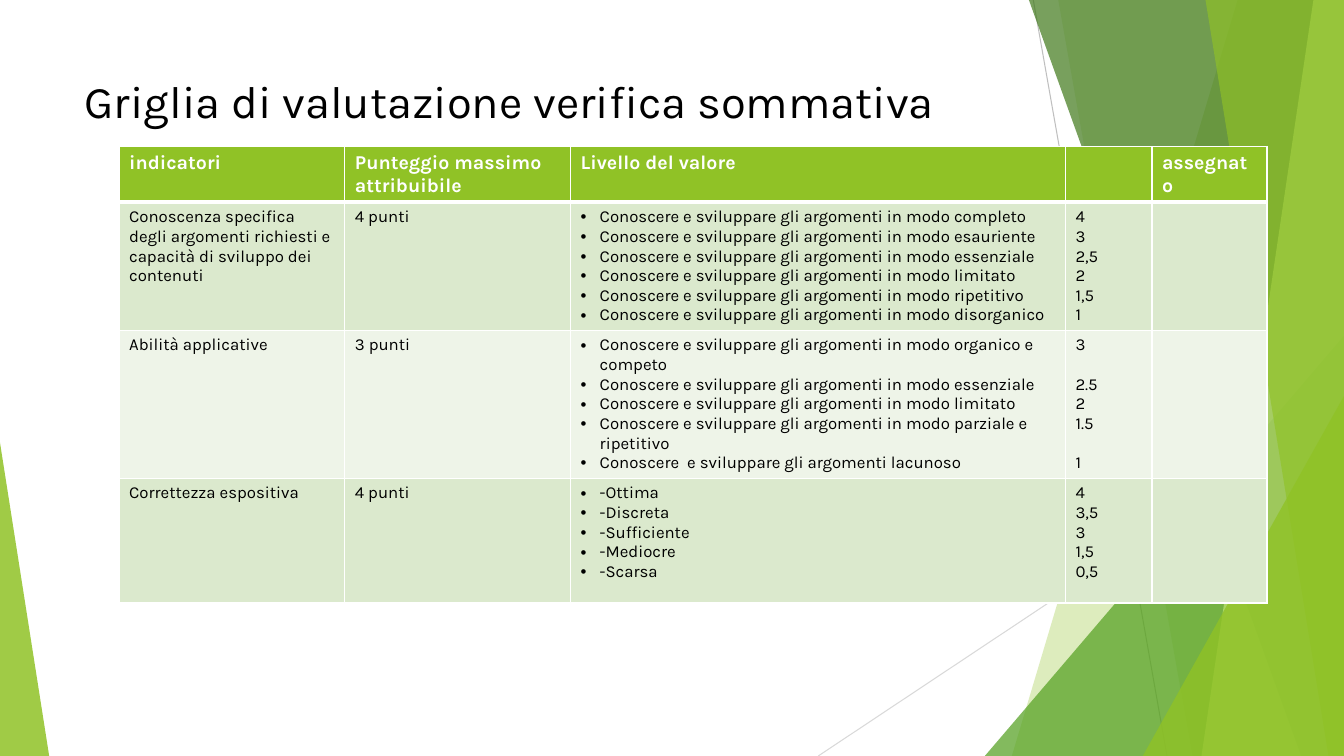
from dataclasses import dataclass

from lxml.etree import SubElement
from pptx import Presentation
from pptx.dml.color import RGBColor
from pptx.enum.shapes import MSO_CONNECTOR as Connector, MSO_SHAPE as Preset
from pptx.enum.text import MSO_ANCHOR as Anchor, MSO_AUTO_SIZE as AutoSize, PP_ALIGN as Align
from pptx.oxml.ns import qn
from pptx.util import Cm, Pt


@dataclass(frozen=True)
class Theme:
    font: str = "Karla"
    black: str = "000000"
    white: str = "FFFFFF"
    lime: str = "90C226"
    pale_lime: str = "C0E474"
    green: str = "54A021"
    dark_green: str = "3F7819"
    grey: str = "BFBFBF"
    light_grey: str = "D9D9D9"
    bands: tuple[str, str] = ("DBE9CD", "EEF4E8")
    title_size: float = 32.4
    header_size: float = 14
    body_size: float = 12
    line_height: float = 14.05


@dataclass(frozen=True)
class Ray:
    start: tuple[float, float]
    end: tuple[float, float]
    color: str


@dataclass(frozen=True)
class Panel:
    top_x: float
    bottom_x: float
    color: str
    opacity: int


@dataclass(frozen=True)
class Triangle:
    box: tuple[float, float, float, float]
    apex: float
    color: str
    opacity: int


@dataclass(frozen=True)
class Level:
    text: str
    score: str
    lines: int = 1


@dataclass(frozen=True)
class Criterion:
    name: str
    points: str
    levels: tuple[Level, ...]


THEME = Theme()
WIDTH, HEIGHT = 33.87, 19.05
COLUMNS = (5.69, 5.69, 12.47, 2.18, 2.9)
ROWS = (1.4, 3.23, 3.73, 3.14)
HEADERS = ("indicatori", "Punteggio massimo attribuibile", "Livello del valore", "", "assegnato")
DEVELOP = "Conoscere e sviluppare gli argomenti in modo "

DECORATION = (
    Ray((26.04, 0), (29.41, HEIGHT), THEME.grey),
    Ray((WIDTH, 10.24), (20.62, HEIGHT), THEME.light_grey),
    Panel(31.19, 25.5, THEME.lime, 30),
    Panel(26.67, 30.05, THEME.lime, 20),
    Triangle((24.82, 8.46, 9.05, 10.59), 1, THEME.green, 72),
    Panel(25.93, 32.79, THEME.dark_green, 70),
    Panel(33.1, 30.28, THEME.pale_lime, 70),
    Panel(30.38, 33.48, THEME.lime, 65),
    Triangle((28.8, 9.98, 5.07, 9.07), 1, THEME.lime, 80),
    Triangle((0, 11.15, 1.24, 7.9), 0, THEME.lime, 85),
)

CRITERIA = (
    Criterion("Conoscenza specifica degli argomenti richiesti e capacità di sviluppo dei contenuti", "4 punti", (
        Level(DEVELOP + "completo", "4"),
        Level(DEVELOP + "esauriente", "3"),
        Level(DEVELOP + "essenziale", "2,5"),
        Level(DEVELOP + "limitato", "2"),
        Level(DEVELOP + "ripetitivo", "1,5"),
        Level(DEVELOP + "disorganico", "1"),
    )),
    Criterion("Abilità applicative", "3 punti", (
        Level(DEVELOP + "organico e competo", "3", lines=2),
        Level(DEVELOP + "essenziale", "2.5"),
        Level(DEVELOP + "limitato", "2"),
        Level(DEVELOP + "parziale e ripetitivo", "1.5", lines=2),
        Level("Conoscere  e sviluppare gli argomenti lacunoso", "1"),
    )),
    Criterion("Correttezza espositiva", "4 punti", (
        Level("-Ottima", "4"),
        Level("-Discreta", "3,5"),
        Level("-Sufficiente", "3"),
        Level("-Mediocre", "1,5"),
        Level("-Scarsa", "0,5"),
    )),
)


def paint(target, color: str, opacity: int = 100) -> None:
    target.fill.solid()
    target.fill.fore_color.rgb = RGBColor.from_string(color)
    if opacity < 100:
        srgb = next(target._element.iter(qn("a:srgbClr")))
        SubElement(srgb, qn("a:alpha"), val=str(opacity * 1000))


def write(frame, *texts: str, size: float = THEME.body_size, color: str = THEME.black,
          bold: bool = False, bullet: bool = False, gaps: tuple[float, ...] = ()) -> None:
    for index, text in enumerate(texts):
        para = frame.paragraphs[0] if index == 0 else frame.add_paragraph()
        para.alignment = Align.LEFT
        if gaps:
            para.space_after = Pt(gaps[index])
        if bullet:
            properties = para._p.get_or_add_pPr()
            properties.set("marL", str(Cm(0.48)))
            properties.set("indent", str(-Cm(0.48)))
            SubElement(properties, qn("a:buFont"), typeface="Arial")
            SubElement(properties, qn("a:buChar"), char="•")
        if text:
            span = para.add_run()
            span.text = text
            span.font.name = THEME.font
            span.font.size = Pt(size)
            span.font.bold = bold
            span.font.color.rgb = RGBColor.from_string(color)


def draw_ray(page, ray: Ray) -> None:
    line = page.shapes.add_connector(Connector.STRAIGHT, *map(Cm, ray.start + ray.end))
    line.line.color.rgb = RGBColor.from_string(ray.color)
    line.line.width = Pt(0.75)
    SubElement(line._element.spPr, qn("a:effectLst"))


def draw_surface(page, surface: Panel | Triangle) -> None:
    if isinstance(surface, Panel):
        builder = page.shapes.build_freeform(Cm(surface.top_x), 0)
        corners = ((WIDTH, 0), (WIDTH, HEIGHT), (surface.bottom_x, HEIGHT))
        builder.add_line_segments([(Cm(x), Cm(y)) for x, y in corners], close=True)
        shape = builder.convert_to_shape()
    else:
        shape = page.shapes.add_shape(Preset.ISOSCELES_TRIANGLE, *map(Cm, surface.box))
        shape.adjustments[0] = surface.apex
    shape.shadow.inherit = False
    shape.line.fill.background()
    paint(shape, surface.color, surface.opacity)


def style_cell(cell, color: str, top: float = 1, bottom: float = 1) -> None:
    properties = cell._tc.get_or_add_tcPr()
    for side, width in (("L", 1), ("R", 1), ("T", top), ("B", bottom)):
        border = SubElement(properties, qn(f"a:ln{side}"), w=str(Pt(width)))
        fill = SubElement(border, qn("a:solidFill"))
        SubElement(fill, qn("a:srgbClr"), val=THEME.white)
    paint(cell, color)


def draw_grid(page) -> None:
    grid = page.shapes.add_table(len(ROWS), len(COLUMNS), Cm(3), Cm(3.69),
                                 Cm(sum(COLUMNS)), Cm(sum(ROWS))).table
    for column, width in zip(grid.columns, COLUMNS):
        column.width = Cm(width)
    for row, height in zip(grid.rows, ROWS):
        row.height = Cm(height)
    for cell, header in zip(grid.rows[0].cells, HEADERS):
        style_cell(cell, THEME.lime, bottom=3)
        write(cell.text_frame, header, size=THEME.header_size, color=THEME.white, bold=True)
    for index, criterion in enumerate(CRITERIA):
        cells = list(grid.rows[index + 1].cells)
        for cell in cells:
            style_cell(cell, THEME.bands[index % 2], top=3 if index == 0 else 1)
        name, points, levels, scores = (cell.text_frame for cell in cells[:4])
        write(name, criterion.name)
        write(points, criterion.points)
        write(levels, *(level.text for level in criterion.levels), bullet=True)
        write(scores, *(level.score for level in criterion.levels),
              gaps=tuple((level.lines - 1) * THEME.line_height for level in criterion.levels))


def main() -> None:
    deck = Presentation()
    deck.slide_width, deck.slide_height = Cm(WIDTH), Cm(HEIGHT)
    page = deck.slides.add_slide(deck.slide_layouts[5])
    for item in DECORATION:
        if isinstance(item, Ray):
            draw_ray(page, item)
        else:
            draw_surface(page, item)
    title = page.shapes.title
    title.left, title.top, title.width, title.height = map(Cm, (1.88, 1.7, 23.88, 1.65))
    title.text_frame.auto_size = AutoSize.NONE
    title.text_frame.vertical_anchor = Anchor.MIDDLE
    write(title.text_frame, "Griglia di valutazione verifica sommativa", size=THEME.title_size)
    draw_grid(page)
    deck.save("out.pptx")


if __name__ == "__main__":
    main()
